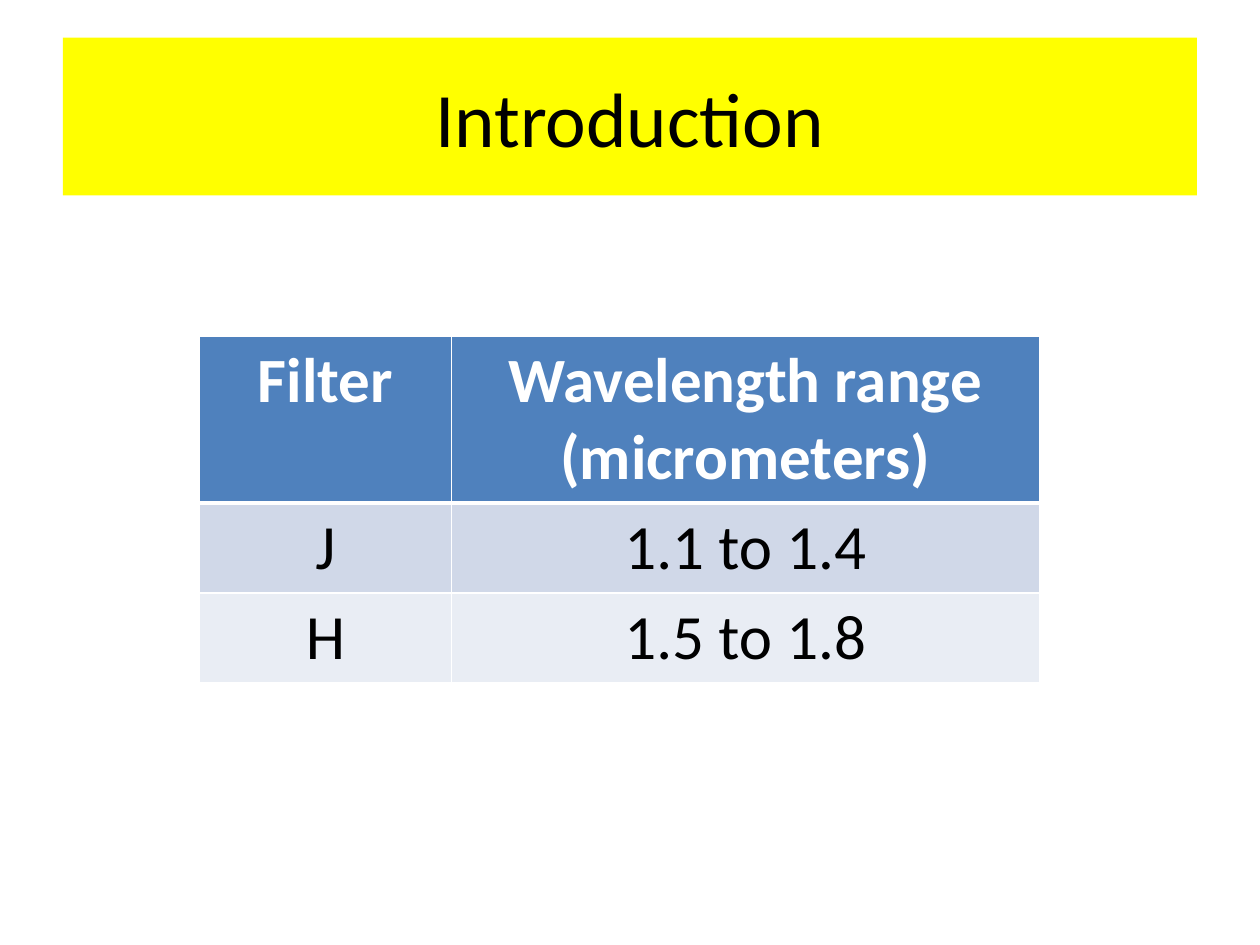
from dataclasses import dataclass

from lxml import etree
from pptx import Presentation
from pptx import util as u
from pptx.dml.color import RGBColor
from pptx.enum import shapes, text
from pptx.oxml import ns

BLACK = RGBColor(0x00, 0x00, 0x00)
WHITE = RGBColor(0xFF, 0xFF, 0xFF)
YELLOW = RGBColor(0xFF, 0xFF, 0x00)
BLUE = RGBColor(0x4F, 0x81, 0xBD)
LIGHT_BLUE = RGBColor(0xD0, 0xD8, 0xE8)
PALE_BLUE = RGBColor(0xE9, 0xED, 0xF4)


@dataclass(frozen=True)
class FilterRow:
    name: tuple[str, ...]
    wavelengths: tuple[str, ...]
    fill: RGBColor
    color: RGBColor = BLACK
    bold: bool = False
    top: float = 1
    bottom: float = 1


ROWS = (
    FilterRow(("Filter",), ("Wavelength range", "(micrometers)"), BLUE, WHITE, True, bottom=3),
    FilterRow(("J",), ("1.1 to 1.4",), LIGHT_BLUE, top=3),
    FilterRow(("H",), ("1.5 to 1.8",), PALE_BLUE),
)
COLUMN_WIDTHS = (u.Cm(5.08), u.Cm(11.85))
ROW_HEIGHT = u.Cm(1.7)


def write(frame, lines: tuple[str, ...], *, size: float, color: RGBColor, bold: bool = False) -> None:
    frame.word_wrap = True
    for index, line in enumerate(lines):
        para = frame.add_paragraph() if index else frame.paragraphs[0]
        para.alignment = text.PP_ALIGN.CENTER
        span = para.add_run()
        span.text = line
        span.font.name = "Calibri"
        span.font.size = u.Pt(size)
        span.font.bold = bold
        span.font.color.rgb = color


def add_borders(cell, row: FilterRow) -> None:
    properties = cell._tc.get_or_add_tcPr()
    for side, width in (("L", 1), ("R", 1), ("T", row.top), ("B", row.bottom)):
        line = etree.SubElement(properties, ns.qn(f"a:ln{side}"), w=str(u.Pt(width)))
        fill = etree.SubElement(line, ns.qn("a:solidFill"))
        etree.SubElement(fill, ns.qn("a:srgbClr"), val=str(WHITE))


def add_title(page) -> None:
    box = page.shapes.add_shape(
        shapes.MSO_SHAPE.RECTANGLE, u.Cm(1.27), u.Cm(0.76), u.Cm(22.86), u.Cm(3.18)
    )
    box.shadow.inherit = False
    box.fill.solid()
    box.fill.fore_color.rgb = YELLOW
    box.line.fill.background()
    box.text_frame.vertical_anchor = text.MSO_ANCHOR.MIDDLE
    write(box.text_frame, ("Introduction",), size=44, color=BLACK)


def add_filter_table(page) -> None:
    table = page.shapes.add_table(
        len(ROWS), len(COLUMN_WIDTHS), u.Cm(4.02), u.Cm(6.78),
        sum(COLUMN_WIDTHS), ROW_HEIGHT * len(ROWS),
    ).table
    for column, width in zip(table.columns, COLUMN_WIDTHS):
        column.width = width
    for line, row in zip(table.rows, ROWS):
        line.height = ROW_HEIGHT
        for cell, lines in zip(line.cells, (row.name, row.wavelengths)):
            add_borders(cell, row)
            cell.fill.solid()
            cell.fill.fore_color.rgb = row.fill
            write(cell.text_frame, lines, size=36, color=row.color, bold=row.bold)


def main() -> None:
    deck = Presentation()
    deck.slide_width, deck.slide_height = u.Cm(25.4), u.Cm(19.05)
    page = deck.slides.add_slide(deck.slide_layouts[6])
    add_title(page)
    add_filter_table(page)
    deck.save("out.pptx")


if __name__ == "__main__":
    main()
